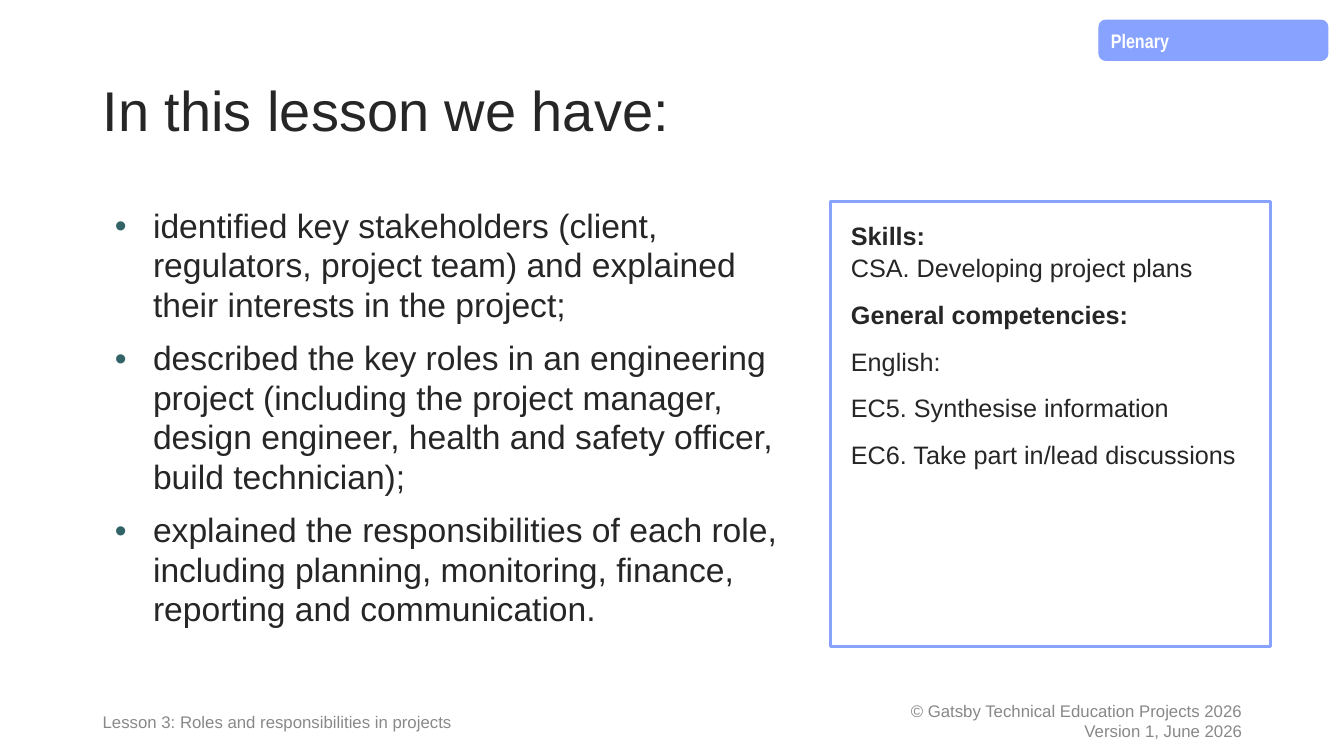
"""Build the plenary slide that sums up the lesson on project roles."""
import pptx
import pptx.dml.color
import pptx.enum.shapes
import pptx.enum.text
import pptx.oxml.ns
import pptx.util
from pptx.util import Inches
import lxml.etree

COLORS = {
    "text": "262626",
    "footer": "898989",
    "copyright": "888888",
    "bullet": "326367",
    "accent": "88A2FF",
    "white": "FFFFFF",
}
MIDDLE = pptx.enum.text.MSO_ANCHOR.MIDDLE
TOP = pptx.enum.text.MSO_ANCHOR.TOP
LEFT = pptx.enum.text.PP_ALIGN.LEFT
RIGHT = pptx.enum.text.PP_ALIGN.RIGHT


def rgb(name):
    return pptx.dml.color.RGBColor.from_string(COLORS[name])


def write(sp, lines, size, color, spacing=1.0, anchor=TOP, align=LEFT,
          font="Arial", inset=(0.1, 0.05)):
    """Fill a shape with (text, bold, space before) lines."""
    tf = sp.text_frame
    tf.word_wrap = True
    tf.vertical_anchor = anchor
    tf.margin_left = tf.margin_right = Inches(inset[0])
    tf.margin_top = tf.margin_bottom = Inches(inset[1])
    for i, (text, bold, before) in enumerate(lines):
        p = tf.add_paragraph() if i else tf.paragraphs[0]
        p.alignment = align
        p.line_spacing = spacing
        p.space_before = pptx.util.Pt(before)
        r = p.add_run()
        r.text = text
        r.font.name = font
        r.font.size = pptx.util.Pt(size)
        r.font.bold = bold
        r.font.color.rgb = rgb(color)
    return tf


prs = pptx.Presentation()
prs.slide_width = Inches(13.33)
prs.slide_height = Inches(7.5)
s = prs.slides.add_slide(prs.slide_layouts[6])

sp = s.shapes.add_textbox(Inches(7.92), Inches(6.95), Inches(4.5), Inches(0.4))
write(sp, [("© Gatsby Technical Education Projects 2026", False, 0),
           ("Version 1, June 2026", False, 0)],
      12, "copyright", anchor=MIDDLE, align=RIGHT)

sp = s.shapes.add_textbox(Inches(0.92), Inches(0.4), Inches(11.5), Inches(1.45))
write(sp, [("In this lesson we have:", False, 0)], 40, "text", 0.9, MIDDLE)

outcomes = [
    "identified key stakeholders (client, regulators, project team) "
    "and explained their interests in the project;",
    "described the key roles in an engineering project (including the project "
    "manager, design engineer, health and safety officer, build technician);",
    "explained the responsibilities of each role, including planning, "
    "monitoring, finance, reporting and communication.",
]
sp = s.shapes.add_textbox(Inches(0.92), Inches(2), Inches(7), Inches(4.76))
tf = write(sp, [(text, False, 10 if i else 0) for i, text in enumerate(outcomes)],
           24, "text", 0.98)
qn = pptx.oxml.ns.qn
for p in tf.paragraphs:
    pPr = p._p.get_or_add_pPr()
    pPr.set("marL", str(Inches(0.5)))
    pPr.set("indent", str(Inches(-0.38)))
    buClr = lxml.etree.SubElement(pPr, qn("a:buClr"))
    lxml.etree.SubElement(buClr, qn("a:srgbClr"), val=COLORS["bullet"])
    lxml.etree.SubElement(pPr, qn("a:buFont"), typeface="Arial")
    lxml.etree.SubElement(pPr, qn("a:buChar"), char="•")

sp = s.shapes.add_shape(pptx.enum.shapes.MSO_SHAPE.RECTANGLE,
                        Inches(8.24), Inches(2), Inches(4.36), Inches(4.41))
sp.shadow.inherit = False
sp.fill.solid()
sp.fill.fore_color.rgb = rgb("white")
sp.line.color.rgb = rgb("accent")
sp.line.width = pptx.util.Pt(2.25)
write(sp, [("Skills:", True, 0),
           ("CSA. Developing project plans", False, 0),
           ("General competencies:", True, 10),
           ("English:", False, 10),
           ("EC5. Synthesise information", False, 10),
           ("EC6. Take part in/lead discussions", False, 10)],
      18, "text", 1.08, inset=(0.2, 0.16))

sp = s.shapes.add_textbox(Inches(0.92), Inches(6.95), Inches(4.6), Inches(0.4))
write(sp, [("Lesson 3: Roles and responsibilities in projects", False, 0)],
      12, "footer", 1.08, MIDDLE)

sp = s.shapes.add_shape(pptx.enum.shapes.MSO_SHAPE.FLOWCHART_ALTERNATE_PROCESS,
                        Inches(10.9), Inches(0.2), Inches(2.27), Inches(0.4))
sp.shadow.inherit = False
sp.fill.solid()
sp.fill.fore_color.rgb = rgb("accent")
sp.line.color.rgb = rgb("accent")
write(sp, [("Plenary", True, 0)], 14, "white", 1.08, font="Arial Narrow")

prs.save("out.pptx")
